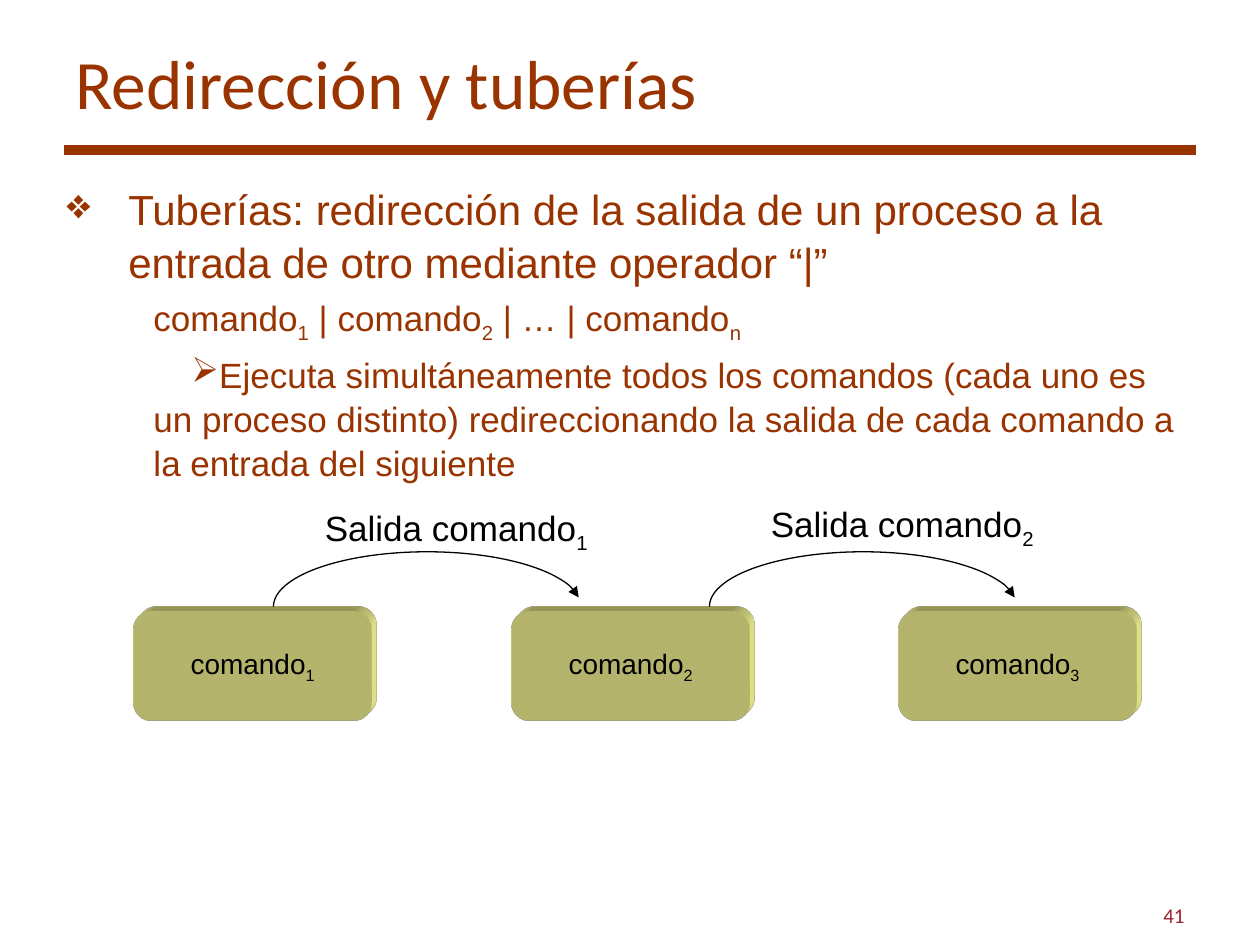
import pptx
import pptx.util
import pptx.dml.color
import pptx.enum.shapes
import pptx.enum.text
import pptx.oxml
import lxml.etree

Pt = pptx.util.Pt
ALIGN = pptx.enum.text.PP_ALIGN
ANCHOR = pptx.enum.text.MSO_ANCHOR
SHAPE = pptx.enum.shapes.MSO_SHAPE
FIT = pptx.enum.text.MSO_AUTO_SIZE
NS = "http://schemas.openxmlformats.org/drawingml/2006/main"

THEME = {
    "rust": "993300", "ink": "000000", "number": "9B212C", "box": "FFFF99",
    "title": {"name": "Calibri", "size": Pt(39.6)},
    "lead": {"name": "Arial", "size": Pt(24)},
    "detail": {"name": "Arial", "size": Pt(20)},
    "command": {"name": "Arial", "size": Pt(16)},
    "page": {"name": "Calibri", "size": Pt(12)},
}

TITLE = "Redirección y tuberías"
PAGE_NUMBER = "41"
BODY = [
    {"spans": ["Tuberías: redirección de la salida de un proceso a la entrada de otro mediante operador “|”"],
     "style": "lead", "level": 0, "margin": 4.9, "indent": -4.9, "bullet": "❖", "before": 0},
    {"spans": ["comando", "1", " | comando", "2", " | … | comando", "n"],
     "style": "detail", "level": 1, "margin": 6.9, "indent": 0, "bullet": None, "before": 4},
    {"spans": ["Ejecuta simultáneamente todos los comandos (cada uno es un proceso distinto) "
               "redireccionando la salida de cada comando a la entrada del siguiente"],
     "style": "detail", "level": 1, "margin": 6.9, "indent": 3, "bullet": "➢", "before": 4},
]
COMMANDS = [("1", 10.6), ("2", 40.6), ("3", 71.3)]
OUTPUTS = [("1", 24.8, 39.7), ("2", 60.2, 39.4)]
ARC_COLUMNS = [21.7, 56.3]

COLUMNS, ROWS = 100, 75
deck = pptx.Presentation()
deck.slide_width, deck.slide_height = pptx.util.Inches(10), pptx.util.Inches(7.5)
page = deck.slides.add_slide(deck.slide_layouts[6])


def across(columns):
    return round(deck.slide_width * columns / COLUMNS)


def down(rows):
    return round(deck.slide_height * rows / ROWS)


def place(column, row, width, height):
    return across(column), down(row), across(width), down(height)


def rgb(value):
    return pptx.dml.color.RGBColor.from_string(value)


def apply(target, values):
    for name, value in values.items():
        setattr(target, name, value)


def add_spans(para, spans, style, color):
    for index, text in enumerate(spans):
        span = para.add_run()
        span.text = text
        apply(span.font, THEME[style])
        span.font.color.rgb = rgb(color)
        if index % 2:
            span._r.get_or_add_rPr().set("baseline", "-25000")


def add_text(area, spans, style, color, frame=None, align=ALIGN.LEFT):
    box = page.shapes.add_textbox(*area)
    apply(box.text_frame, {"word_wrap": True, **(frame or {})})
    para = box.text_frame.paragraphs[0]
    para.alignment = align
    add_spans(para, spans, style, color)


def add_body():
    box = page.shapes.add_textbox(*place(4.3, 13.9, 90.7, 12.3))
    box.text_frame.word_wrap = True
    for index, item in enumerate(BODY):
        para = box.text_frame.add_paragraph() if index else box.text_frame.paragraphs[0]
        apply(para, {"level": item["level"], "line_spacing": 1.05, "space_before": Pt(item["before"])})
        props = para._p.get_or_add_pPr()
        props.set("marL", str(across(item["margin"])))
        props.set("indent", str(across(item["indent"])))
        if item["bullet"]:
            lxml.etree.SubElement(props, f"{{{NS}}}buChar", char=item["bullet"])
        else:
            lxml.etree.SubElement(props, f"{{{NS}}}buNone")
        add_spans(para, item["spans"], item["style"], THEME["rust"])


def add_command(number, column):
    box = page.shapes.add_shape(SHAPE.ROUNDED_RECTANGLE, *place(column, 48.5, 18.9, 8.7))
    box.shadow.inherit = False
    box.adjustments[0] = 0.167
    box.fill.solid()
    box.fill.fore_color.rgb = rgb(THEME["box"])
    box.line.fill.background()
    depth = (
        f'<a:scene3d xmlns:a="{NS}"><a:camera prst="legacyObliqueTopRight"/>'
        '<a:lightRig rig="legacyFlat3" dir="b"/></a:scene3d>',
        f'<a:sp3d xmlns:a="{NS}" extrusionH="100000" prstMaterial="legacyMatte">'
        '<a:bevelT w="13500" h="13500" prst="angle"/><a:bevelB w="13500" h="13500" prst="angle"/>'
        f'<a:extrusionClr><a:srgbClr val="{THEME["box"]}"/></a:extrusionClr></a:sp3d>',
    )
    for part in depth:
        box._element.spPr.append(pptx.oxml.parse_xml(part))
    box.text_frame.vertical_anchor = ANCHOR.MIDDLE
    para = box.text_frame.paragraphs[0]
    para.alignment = ALIGN.CENTER
    add_spans(para, ["comando", number], "command", THEME["ink"])


def add_arc(column):
    arc = page.shapes.add_shape(SHAPE.ARC, *place(column, 43.8, 24.4, 8.7))
    arc.shadow.inherit = False
    arc.adjustments[0], arc.adjustments[1] = 110.08, 0
    arc.rotation = 180
    arc._element.spPr.xfrm.set("flipV", "1")
    arc.fill.background()
    arc.line.color.rgb = rgb(THEME["ink"])
    arc.line.width = Pt(0.75)
    lxml.etree.SubElement(arc.line._get_or_add_ln(), f"{{{NS}}}headEnd", type="triangle")


rule = page.shapes.add_connector(
    pptx.enum.shapes.MSO_CONNECTOR.STRAIGHT, across(5.1), down(11.9), across(94.9), down(11.9))
rule.line.color.rgb = rgb(THEME["rust"])
rule.line.width = Pt(6)
lxml.etree.SubElement(rule._element.spPr, f"{{{NS}}}effectLst")

middle = {"vertical_anchor": ANCHOR.MIDDLE}
add_text(place(5, 3, 90, 6.9), [TITLE], "title", THEME["rust"], middle)
add_body()
add_text(place(71.7, 70.6, 23.3, 4), [PAGE_NUMBER], "page", THEME["number"], middle, ALIGN.RIGHT)
for number, column in COMMANDS:
    add_command(number, column)
for column in ARC_COLUMNS:
    add_arc(column)
for number, column, row in OUTPUTS:
    add_text(place(column, row, 23.7, 4.4), ["Salida comando", number], "detail", THEME["ink"],
             {"word_wrap": False, "auto_size": FIT.SHAPE_TO_FIT_TEXT})

deck.save("out.pptx")
